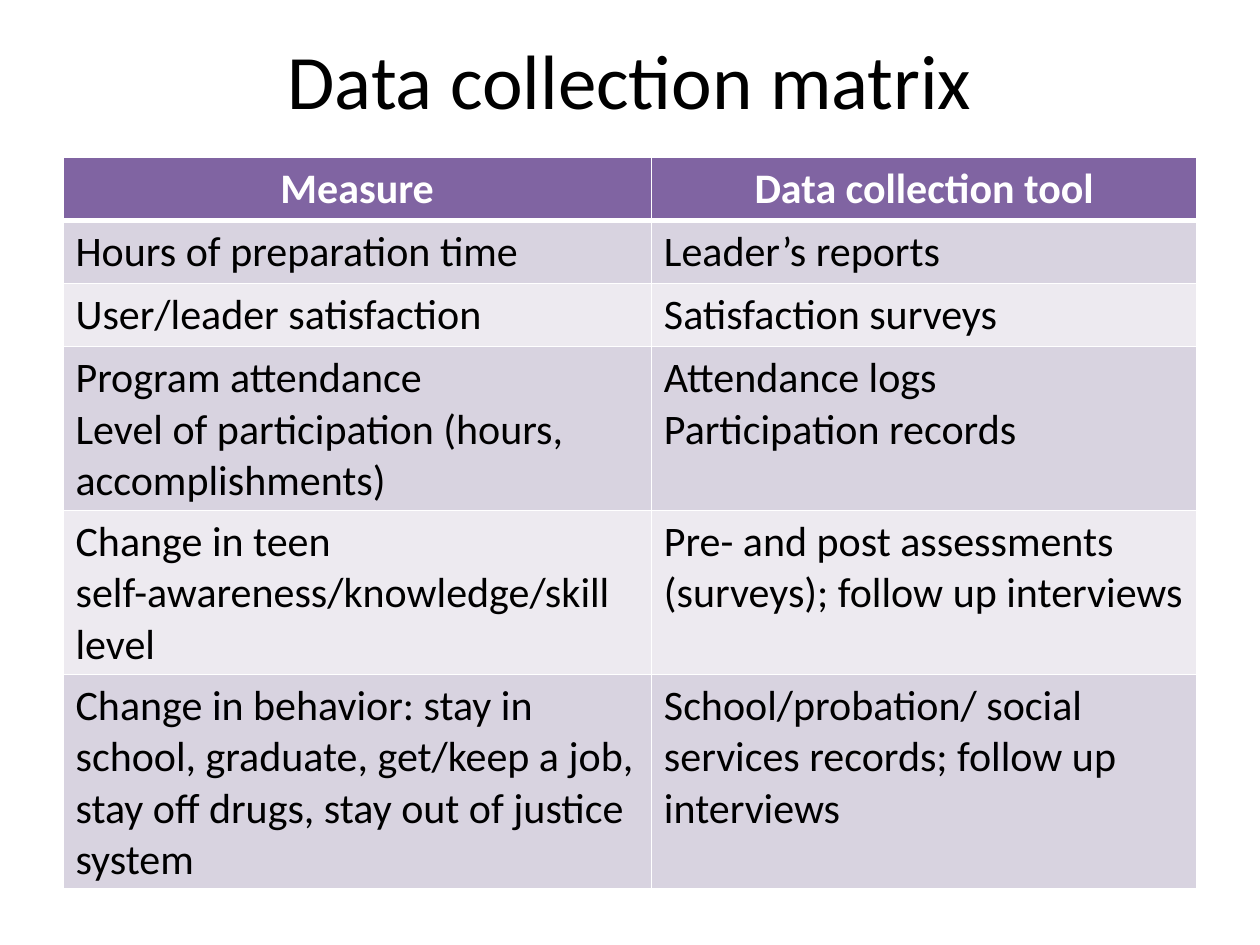
"""Build the data collection matrix slide."""
from lxml.etree import SubElement
from pptx import Presentation
from pptx.dml.color import RGBColor
from pptx.enum.text import MSO_ANCHOR as Anchor, PP_ALIGN as Align
from pptx.oxml.ns import qn
from pptx.util import Inches, Pt

WHITE, BLACK, PURPLE = "FFFFFF", "000000", "8064A2"
BANDS = ["D8D3E0", "EDEAF0"]
MARGIN, TITLE_HEIGHT = 0.5, 1.25
COLUMNS = [4.67, 4.33]
LINE_HEIGHT, ROW_PADDING = 0.4, 0.1
ROWS = [
    (1, "Measure", "Data collection tool"),
    (1, "Hours of preparation time", "Leader’s reports"),
    (1, "User/leader satisfaction", "Satisfaction surveys"),
    (3, "Program attendance\nLevel of participation (hours, accomplishments)",
     "Attendance logs\nParticipation records"),
    (3, "Change in teen self-awareness/knowledge/skill level",
     "Pre- and post assessments (surveys); follow up interviews"),
    (4, "Change in behavior: stay in school, graduate, get/keep a job, "
        "stay off drugs, stay out of justice system",
     "School/probation/ social services records; follow up interviews"),
]


def write(frame, text, size=24, color=BLACK, bold=False, align=Align.LEFT):
    frame.word_wrap = True
    frame.text = text
    for paragraph in frame.paragraphs:
        paragraph.alignment = align
        font = paragraph.runs[0].font
        font.name, font.size, font.bold = "Calibri", Pt(size), bold
        font.color.rgb = RGBColor.from_string(color)


def add_border(cell, side, width):
    line = SubElement(cell._tc.get_or_add_tcPr(), qn(f"a:ln{side}"), w=str(Pt(width)))
    SubElement(SubElement(line, qn("a:solidFill")), qn("a:srgbClr"), val=WHITE)


presentation = Presentation()
presentation.slide_width, presentation.slide_height = Inches(10), Inches(7.5)
slide = presentation.slides.add_slide(presentation.slide_layouts[6])

title = slide.shapes.add_textbox(
    Inches(MARGIN), 0, Inches(sum(COLUMNS)), Inches(TITLE_HEIGHT))
title.text_frame.vertical_anchor = Anchor.MIDDLE
write(title.text_frame, "Data collection matrix", size=44, align=Align.CENTER)

heights = [ROW_PADDING + LINE_HEIGHT * lines for lines, *_ in ROWS]
table = slide.shapes.add_table(
    len(ROWS), len(COLUMNS), Inches(MARGIN), Inches(TITLE_HEIGHT),
    Inches(sum(COLUMNS)), Inches(sum(heights))).table
for column, width in zip(table.columns, COLUMNS):
    column.width = Inches(width)

for row_index, (_, *texts) in enumerate(ROWS):
    table.rows[row_index].height = Inches(heights[row_index])
    header = row_index == 0
    for column_index, text in enumerate(texts):
        cell = table.cell(row_index, column_index)
        for side in "LRTB":
            heavy = (side, row_index) in [("B", 0), ("T", 1)]
            add_border(cell, side, 3 if heavy else 1)
        cell.fill.solid()
        fill = PURPLE if header else BANDS[(row_index - 1) % 2]
        cell.fill.fore_color.rgb = RGBColor.from_string(fill)
        write(cell.text_frame, text, bold=header,
              color=WHITE if header else BLACK,
              align=Align.CENTER if header else Align.LEFT)

presentation.save("out.pptx")
